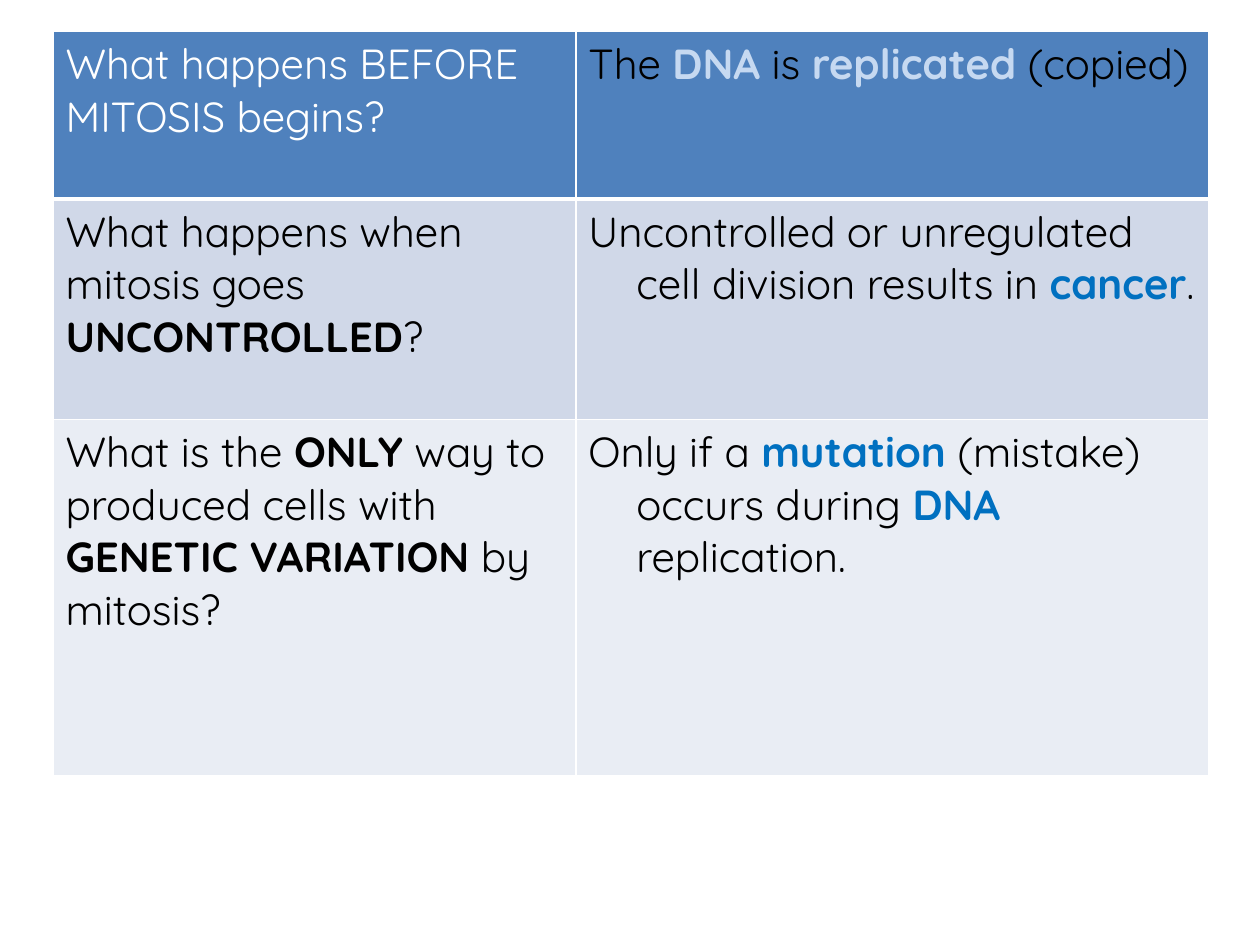
from lxml.etree import SubElement
from pptx import Presentation
from pptx.dml.color import RGBColor
from pptx.oxml.ns import qn
from pptx.util import Inches, Pt

COLORS = {
    "white": "FFFFFF", "black": "000000", "header": "4F81BD",
    "band_dark": "D0D8E8", "band_light": "E9EDF4",
    "pale_blue": "C6D9F1", "blue": "0070C0",
}
FONT = {"name": "Quicksand", "size": Pt(24)}
COLUMN_WIDTHS = [4.15, 5.02]
HANGING_INDENT = 0.38

# Each run is (text, colour, bold).
ROWS = [
    {"height": 1.33, "fill": "header", "bottom": 3, "hanging": False, "cells": [
        [("What happens BEFORE MITOSIS begins?", "white", False)],
        [("The ", "black", False), ("DNA", "pale_blue", True),
         (" is ", "black", False), ("replicated", "pale_blue", True),
         (" (copied)", "black", False)],
    ]},
    {"height": 1.75, "fill": "band_dark", "bottom": 1, "hanging": True, "cells": [
        [("What happens when mitosis goes ", "black", False),
         ("UNCONTROLLED", "black", True), ("?", "black", False)],
        [("Uncontrolled or unregulated cell division results in ", "black", False),
         ("cancer", "blue", True), (".", "black", False)],
    ]},
    {"height": 2.83, "fill": "band_light", "bottom": 1, "hanging": True, "cells": [
        [("What is the ", "black", False), ("ONLY", "black", True),
         (" way to produced cells with ", "black", False),
         ("GENETIC VARIATION ", "black", True), ("by mitosis?", "black", False)],
        [("Only if a ", "black", False), ("mutation", "blue", True),
         (" (mistake) occurs during ", "black", False), ("DNA", "blue", True),
         (" replication.", "black", False)],
    ]},
]


def rgb(name):
    return RGBColor.from_string(COLORS[name])


def write_runs(para, runs):
    for text, color, bold in runs:
        span = para.add_run()
        span.text = text
        for key, value in {**FONT, "bold": bold}.items():
            setattr(span.font, key, value)
        span.font.color.rgb = rgb(color)


def hang_indent(para):
    props = para._p.get_or_add_pPr()
    props.set("marL", str(Inches(HANGING_INDENT)))
    props.set("indent", str(-Inches(HANGING_INDENT)))


def draw_borders(cell, bottom):
    """Give the cell white borders; the bottom one has its own width in points."""
    props = cell._tc.get_or_add_tcPr()
    widths = {"lnL": 1, "lnR": 1, "lnT": 1, "lnB": bottom}
    for position, (side, width) in enumerate(widths.items()):
        line = SubElement(props, qn(f"a:{side}"), w=str(Pt(width)))
        fill = SubElement(line, qn("a:solidFill"))
        SubElement(fill, qn("a:srgbClr"), val=COLORS["white"])
        props.insert(position, line)


def add_question_table(page):
    height = sum(row["height"] for row in ROWS)
    frame = page.shapes.add_table(
        len(ROWS), len(COLUMN_WIDTHS), Inches(0.42), Inches(0.25),
        Inches(sum(COLUMN_WIDTHS)), Inches(height))
    table = frame.table
    for column, width in zip(table.columns, COLUMN_WIDTHS):
        column.width = Inches(width)
    for table_row, row in zip(table.rows, ROWS):
        table_row.height = Inches(row["height"])
        for index, (cell, runs) in enumerate(zip(table_row.cells, row["cells"])):
            cell.fill.solid()
            cell.fill.fore_color.rgb = rgb(row["fill"])
            draw_borders(cell, row["bottom"])
            para = cell.text_frame.paragraphs[0]
            write_runs(para, runs)
            if row["hanging"] and index == 1:
                hang_indent(para)


def main():
    deck = Presentation()
    deck.slide_width, deck.slide_height = Inches(10), Inches(7.5)
    page = deck.slides.add_slide(deck.slide_layouts[6])
    add_question_table(page)
    deck.save("out.pptx")


if __name__ == "__main__":
    main()
